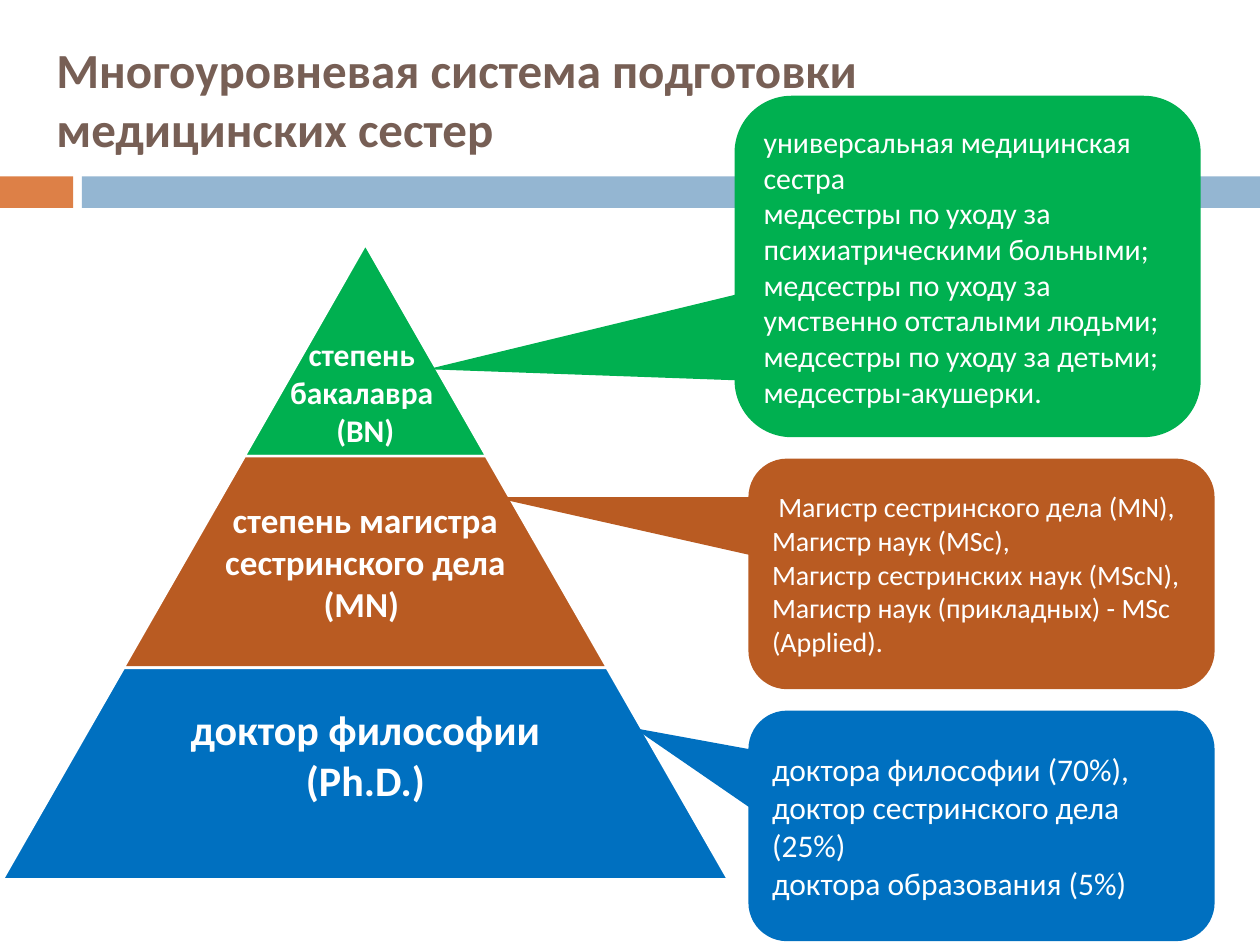
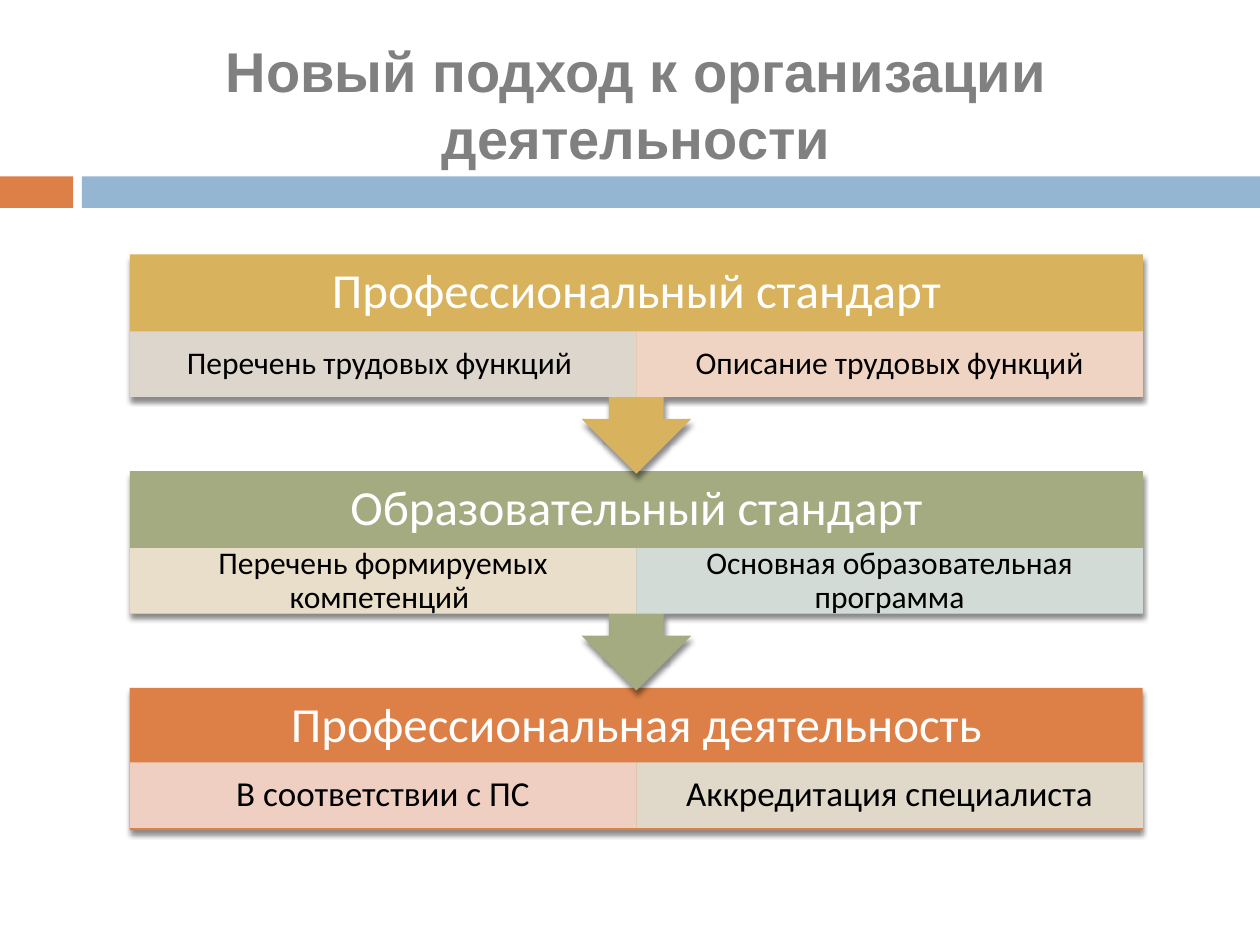
from lxml.etree import SubElement
from pptx import Presentation
from pptx.dml.color import RGBColor
from pptx.enum.shapes import MSO_SHAPE
from pptx.enum.text import MSO_ANCHOR, PP_ALIGN
from pptx.oxml.ns import qn
from pptx.util import Inches, Pt

WHITE = RGBColor(0xFF, 0xFF, 0xFF)
BLACK = RGBColor(0x00, 0x00, 0x00)
BROWN = RGBColor(0x77, 0x5F, 0x55)
GRAY = RGBColor(0x80, 0x80, 0x80)
ORANGE = RGBColor(0xDD, 0x80, 0x47)
SKY = RGBColor(0x94, 0xB6, 0xD2)
GREEN = RGBColor(0x00, 0xB0, 0x50)
RUST = RGBColor(0xB9, 0x5B, 0x22)
BLUE = RGBColor(0x00, 0x70, 0xC0)
OLIVE = RGBColor(0xA5, 0xAB, 0x81)
GOLD = RGBColor(0xD8, 0xB2, 0x5C)
PALE_GRAY = RGBColor(0xDD, 0xDA, 0xDA)
PALE_PEACH = RGBColor(0xF2, 0xD8, 0xCF)
PALE_SAND = RGBColor(0xF0, 0xE4, 0xD2)
PALE_TEAL = RGBColor(0xD7, 0xE1, 0xDF)
PALE_OLIVE = RGBColor(0xE1, 0xE2, 0xD8)


def write(sp, paragraphs, size, color=WHITE, font="Calibri", bold=False,
          align=PP_ALIGN.LEFT, inset=(0.1, 0.05), spacing=None):
    """Fill a shape with vertically centred paragraphs."""
    tf = sp.text_frame
    tf.word_wrap = True
    tf.vertical_anchor = MSO_ANCHOR.MIDDLE
    tf.margin_left = tf.margin_right = Inches(inset[0])
    tf.margin_top = tf.margin_bottom = Inches(inset[1])
    for i, text in enumerate(paragraphs):
        p = tf.paragraphs[0] if i == 0 else tf.add_paragraph()
        p.alignment = align
        p.line_spacing = spacing
        for j, line in enumerate(text.split("\n")):
            if j:
                p.add_line_break()
            r = p.add_run()
            r.text = line
            r.font.size = Pt(size)
            r.font.name = font
            r.font.bold = bold
            r.font.color.rgb = color


def add_text(s, box, paragraphs, size, **fmt):
    """Add a text box."""
    sp = s.shapes.add_textbox(*map(Inches, box))
    write(sp, paragraphs, size, **fmt)


def add_block(s, kind, box, fill, adjustments=(), outline=None):
    """Add a flat preset shape, with a white outline of the given width if any."""
    sp = s.shapes.add_shape(kind, *map(Inches, box))
    sp.shadow.inherit = False
    sp.fill.solid()
    sp.fill.fore_color.rgb = fill
    if outline:
        sp.line.color.rgb = WHITE
        sp.line.width = Pt(outline)
    else:
        sp.line.fill.background()
    for i, value in enumerate(adjustments):
        sp.adjustments[i] = value
    return sp


def add_alpha(color, percent):
    """Set the opacity of a colour element."""
    SubElement(color, qn("a:alpha"), val=str(percent * 1000))


def drop_shadow(sp):
    """Give a shape a soft shadow below it."""
    effects = sp._element.spPr.find(qn("a:effectLst"))
    shadow = SubElement(effects, qn("a:outerShdw"), blurRad=str(Pt(3)),
                        dist=str(Pt(2.4)), dir="5400000", rotWithShape="0")
    add_alpha(SubElement(shadow, qn("a:srgbClr"), val="000000"), 45)


def add_slide(prs, title, box, size, **fmt):
    """Add a blank slide with the two bands and a bold title."""
    s = prs.slides.add_slide(prs.slide_layouts[6])
    for left, width, fill in ((0, 0.58, ORANGE), (0.65, 9.35, SKY)):
        add_block(s, MSO_SHAPE.RECTANGLE, (left, 1.4, width, 0.25), fill)
    add_text(s, box, [title], size, bold=True, **fmt)
    return s


def add_pyramid(s, fills, labels):
    """Stack trapezoids that widen evenly, and label them."""
    center, top, step, height = 2.9, 1.94, 1.92, 1.68
    for i, fill in enumerate(fills):
        width = step * (i + 1)
        add_block(s, MSO_SHAPE.TRAPEZOID,
                  (center - width / 2, top + i * height, width, height),
                  fill, [0.573], outline=1.5)
    for y, width, h, size, paragraphs in labels:
        add_text(s, (center - width / 2, y, width, h), paragraphs, size,
                 bold=True, align=PP_ALIGN.CENTER, inset=(0.03, 0.03))


def add_callout(s, box, fill, pointer, size, paragraphs):
    """Add a rounded callout pointing at a pyramid level."""
    sp = add_block(s, MSO_SHAPE.ROUNDED_RECTANGULAR_CALLOUT, box, fill,
                   (*pointer, 0.167))
    write(sp, paragraphs, size)


def add_stage(s, top, fill, heading, details, size, last):
    """Add a heading over two detail cells, with a down arrow unless last."""
    left, width, cell_h = 1.03, 8.04, 0.52
    if last:
        sp = add_block(s, MSO_SHAPE.RECTANGLE, (left, top, width, 1.13), fill)
    else:
        sp = add_block(s, MSO_SHAPE.UP_ARROW_CALLOUT, (left, top, width, 1.74), fill)
        sp.rotation = 180
    drop_shadow(sp)
    centred = dict(align=PP_ALIGN.CENTER, spacing=0.9)
    add_text(s, (left, top, width, 0.61), [heading], 28, inset=(0.22, 0.03), **centred)
    cell_top = top + (0.59 if last else 0.61)
    for i, (text, cell_fill) in enumerate(details):
        cell = add_block(s, MSO_SHAPE.RECTANGLE,
                         (left + i * width / 2, cell_top, width / 2, cell_h), cell_fill)
        add_alpha(cell._element.spPr.find(qn("a:solidFill"))[0], 90)
        write(cell, [text], size, color=BLACK, inset=(0.15, 0.03), **centred)


def build_levels(prs):
    """Build the slide on the levels of nurse training."""
    s = add_slide(prs, "Многоуровневая система подготовки медицинских сестер",
                  (0.35, 0.24, 7.74, 1.08), 28, color=BROWN)
    add_pyramid(s, (GREEN, RUST, BLUE), (
        (2.81, 1.57, 0.6, 18, ["степень ", "бакалавра ", "(BN)"]),
        (3.62, 2.5, 1.68, 20, ["степень магистра сестринского дела (MN) "]),
        (5.3, 3.75, 1.37, 24, ["доктор философии (Ph.D.)"]),
    ))
    add_callout(s, (5.83, 0.76, 3.7, 2.71), GREEN, (-1.158, 0.301), 17, [
        "универсальная медицинская сестра",
        "медсестры по уходу за психиатрическими больными;",
        "медсестры по уходу за умственно отсталыми людьми;",
        "медсестры по уходу за детьми;",
        "медсестры-акушерки.",
    ])
    add_callout(s, (5.94, 3.64, 3.7, 1.83), RUST, (-1.048, -0.333), 16, [
        " Магистр сестринского дела (МN),",
        "Магистр наук (MSc),",
        "Магистр сестринских наук (MScN),",
        "Магистр наук (прикладных) - MSc (Applied).",
    ])
    add_callout(s, (5.94, 5.64, 3.7, 1.83), BLUE, (-0.745, -0.424), 18, [
        "доктора философии (70%),",
        "доктор сестринского дела (25%)",
        "доктора образования (5%)",
    ])


def build_approach(prs):
    """Build the slide on the new approach, drawing the lowest stage first."""
    s = add_slide(prs, "Новый подход к организации\nдеятельности",
                  (0.8, 0.2, 8.5, 1.25), 32, color=GRAY, font="Arial",
                  align=PP_ALIGN.CENTER)
    stages = [
        (GOLD, "Профессиональный стандарт",
         (("Перечень трудовых функций ", PALE_GRAY),
          ("Описание трудовых функций", PALE_PEACH)), 18),
        (OLIVE, "Образовательный стандарт",
         (("Перечень формируемых компетенций ", PALE_SAND),
          ("Основная образовательная программа", PALE_TEAL)), 18),
        (ORANGE, "Профессиональная деятельность",
         (("В соответствии с ПС", PALE_PEACH),
          ("Аккредитация специалиста", PALE_OLIVE)), 20),
    ]
    for i, stage in reversed(list(enumerate(stages))):
        add_stage(s, 2.02 + 1.72 * i, *stage, last=i == len(stages) - 1)


def main():
    """Build and save the presentation."""
    prs = Presentation()
    prs.slide_width = Inches(10)
    prs.slide_height = Inches(7.5)
    build_levels(prs)
    build_approach(prs)
    prs.save("out.pptx")


if __name__ == "__main__":
    main()
